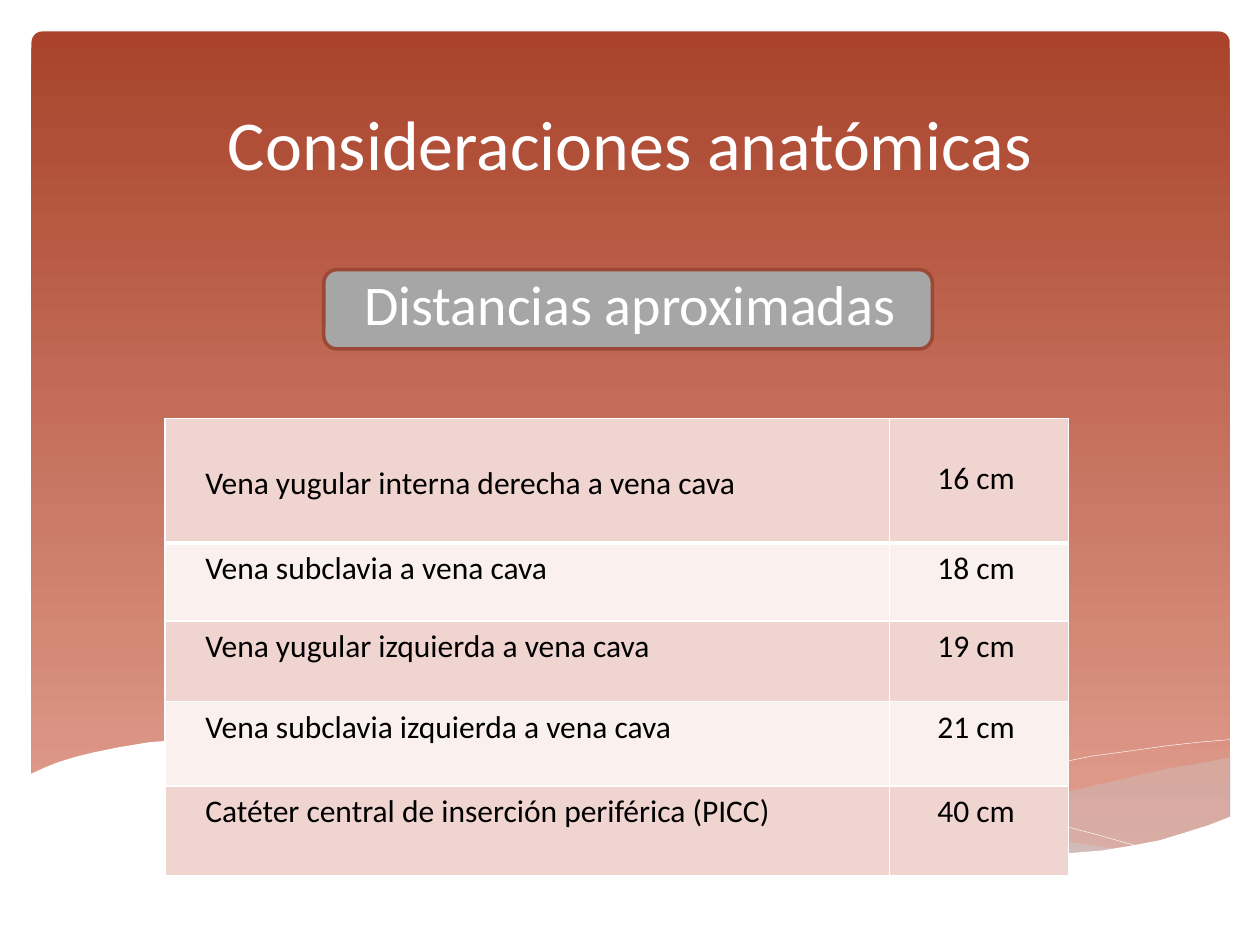
from lxml import etree
from pptx import Presentation
from pptx.dml.color import RGBColor
from pptx.enum.shapes import MSO_SHAPE
from pptx.enum.text import MSO_ANCHOR, PP_ALIGN
from pptx.oxml.ns import qn
from pptx.util import Inches, Pt

ROUNDED = MSO_SHAPE.ROUNDED_RECTANGLE
MIDDLE, TOP = MSO_ANCHOR.MIDDLE, MSO_ANCHOR.TOP
CENTER, LEFT = PP_ALIGN.CENTER, PP_ALIGN.LEFT

COLORS = {
    "white": "FFFFFF", "black": "000000",
    "panel_top": "A9432B", "panel_bottom": "E3A192",
    "mist": "C5D1D7", "pill": "A6A6A6", "pill_line": "9B4936",
    "band_dark": "EFD4D0", "band_light": "FAF1EF",
}
FONT = "Calibri"

TITLE = "Consideraciones anatómicas"
SUBTITLE = "Distancias aproximadas"
DISTANCES = [
    ("Vena yugular interna derecha a vena cava", "16 cm"),
    ("Vena subclavia a vena cava", "18 cm"),
    ("Vena yugular izquierda a vena cava", "19 cm"),
    ("Vena subclavia izquierda a vena cava", "21 cm"),
    ("Catéter central de inserción periférica (PICC)", "40 cm"),
]
COL_WIDTHS = (5.75, 1.42)
ROW_HEIGHTS = (0.99, 0.62, 0.64, 0.67, 0.71)
LEFT_MARGINS = (0.32, 0.38)
FIRST_ROW_TOPS = (0.37, 0.33)

# Waves at the foot of the panel, back to front: points in inches, then format
WAVES = [
    ([(9.77, 6.01), (9.5, 6.06), (9.22, 6.11), (8.92, 6.18), (8.62, 6.25),
      (8.06, 6.38), (7.54, 6.5), (7.07, 6.59), (6.62, 6.67), (6.92, 6.71),
      (7.19, 6.74), (7.45, 6.77), (7.7, 6.79), (8.04, 6.8), (8.36, 6.79),
      (8.64, 6.77), (8.9, 6.74), (9.14, 6.69), (9.37, 6.63), (9.51, 6.59),
      (9.77, 6.49)], {"fill": "mist", "alpha": 29}),
    ([(8.94, 6.75), (8.67, 6.71), (8.08, 6.62), (7.42, 6.49), (6.69, 6.33),
      (6.3, 6.24), (5.84, 6.13), (5.42, 6.05), (5.02, 5.98), (4.65, 5.93),
      (4.2, 5.89), (3.8, 5.88), (3.45, 5.88), (3.14, 5.9), (2.87, 5.93),
      (3.23, 5.98), (3.63, 6.05), (4.05, 6.13), (4.5, 6.24), (5.3, 6.42),
      (6.02, 6.57), (6.51, 6.66), (6.96, 6.72), (7.37, 6.77), (7.74, 6.79),
      (8.08, 6.8), (8.39, 6.8), (8.68, 6.78)], {"fill": "mist", "alpha": 40}),
    ([(3.1, 5.97), (3.29, 5.94), (3.53, 5.91), (3.88, 5.89), (4.33, 5.89),
      (4.69, 5.9), (5.11, 5.94), (5.57, 5.98), (6.09, 6.06), (6.66, 6.15),
      (7.28, 6.28), (7.96, 6.43), (8.69, 6.62), (9.08, 6.73)],
     {"line": "white"}),
    ([(6.14, 6.59), (6.53, 6.48), (6.96, 6.37), (7.49, 6.25), (8.07, 6.12),
      (8.67, 6), (8.97, 5.96), (9.25, 5.92), (9.52, 5.89), (9.76, 5.87)],
     {"line": "white"}),
    ([(9.77, 6.48), (9.59, 6.55), (9.4, 6.61), (9.2, 6.67), (8.99, 6.71),
      (8.75, 6.75), (8.5, 6.77), (8.23, 6.79), (7.93, 6.78), (7.61, 6.77),
      (7.26, 6.74), (6.88, 6.7), (6.47, 6.64), (6.03, 6.56), (5.55, 6.47),
      (5.03, 6.35), (4.47, 6.22), (3.91, 6.09), (3.39, 5.99), (2.92, 5.92),
      (2.5, 5.88), (2.11, 5.86), (1.77, 5.86), (1.46, 5.87), (1.19, 5.89),
      (0.95, 5.93), (0.75, 5.97), (0.59, 6.01), (0.46, 6.05), (0.36, 6.09),
      (0.23, 6.15), (0.23, 7.31), (9.77, 7.31)], {"fill": "white"}),
]


def rgb(name):
    return RGBColor.from_string(COLORS[name])


def write(p, text, size=18, color="black", align=LEFT, before=0):
    p.alignment = align
    if before:
        p.space_before = Pt(before)
    r = p.add_run()
    r.text = text
    r.font.name = FONT
    r.font.size = Pt(size)
    r.font.color.rgb = rgb(color)


def add_wave(shapes, points, fill=None, alpha=None, line=None):
    pts = [(Inches(x), Inches(y)) for x, y in points]
    builder = shapes.build_freeform(*pts[0])
    builder.add_line_segments(pts[1:], close=fill is not None)
    sp = builder.convert_to_shape()
    sp.shadow.inherit = False
    if fill:
        sp.fill.solid()
        sp.fill.fore_color.rgb = rgb(fill)
    else:
        sp.fill.background()
    if alpha:
        clr = sp._element.spPr.find(qn("a:solidFill"))[0]
        etree.SubElement(clr, qn("a:alpha"), val=str(alpha * 1000))
    if line:
        sp.line.color.rgb = rgb(line)
        sp.line.width = Pt(0.25)
    else:
        sp.line.fill.background()


def add_borders(cell, widths):
    """Draw white borders; widths maps the side letters L, R, T, B to points."""
    tc_pr = cell._tc.get_or_add_tcPr()
    for side, width in widths.items():
        ln = etree.SubElement(tc_pr, qn(f"a:ln{side}"), w=str(Pt(width)))
        solid = etree.SubElement(ln, qn("a:solidFill"))
        etree.SubElement(solid, qn("a:srgbClr"), val=COLORS["white"])


def add_panel(shapes):
    sp = shapes.add_shape(ROUNDED, Inches(0.25), Inches(0.25), Inches(9.51), Inches(6.6))
    sp.adjustments[0] = 0.013
    sp.shadow.inherit = False
    sp.line.fill.background()
    sp.fill.gradient()
    sp.fill.gradient_angle = 270
    for stop, name, pos in zip(sp.fill.gradient_stops, ("panel_top", "panel_bottom"), (0, 1)):
        stop.color.rgb = rgb(name)
        stop.position = pos


def add_heading(shapes):
    pill = shapes.add_shape(ROUNDED, Inches(2.57), Inches(2.14), Inches(4.83), Inches(0.63))
    pill.shadow.inherit = False
    pill.fill.solid()
    pill.fill.fore_color.rgb = rgb("pill")
    pill.line.color.rgb = rgb("pill_line")
    pill.line.width = Pt(2)

    tf = shapes.add_textbox(Inches(0.5), Inches(1.05), Inches(9), Inches(1.37)).text_frame
    tf.word_wrap = True
    tf.vertical_anchor = MIDDLE
    write(tf.paragraphs[0], TITLE, size=40, color="white", align=CENTER)
    write(tf.add_paragraph(), SUBTITLE, size=32, color="white", align=CENTER, before=49)


def add_distance_table(shapes):
    table = shapes.add_table(
        len(DISTANCES), len(COL_WIDTHS), Inches(1.31), Inches(3.32),
        Inches(sum(COL_WIDTHS)), Inches(sum(ROW_HEIGHTS))).table
    table.first_row = table.horz_banding = False
    for col, width in zip(table.columns, COL_WIDTHS):
        col.width = Inches(width)
    for i, (row, height) in enumerate(zip(table.rows, ROW_HEIGHTS)):
        row.height = Inches(height)
        for j, cell in enumerate(row.cells):
            add_borders(cell, {"L": 1, "R": 1, "T": 3 if i == 1 else 1, "B": 3 if i == 0 else 1})
            cell.fill.solid()
            cell.fill.fore_color.rgb = rgb("band_light" if i % 2 else "band_dark")
            cell.vertical_anchor = TOP
            cell.margin_left = Inches(LEFT_MARGINS[j])
            cell.margin_top = Inches(0.05 if i else FIRST_ROW_TOPS[j])
            write(cell.text_frame.paragraphs[0], DISTANCES[i][j])


def main():
    prs = Presentation()
    prs.slide_width, prs.slide_height = Inches(10), Inches(7.5)
    s = prs.slides.add_slide(prs.slide_layouts[6])
    add_panel(s.shapes)
    for points, style in WAVES:
        add_wave(s.shapes, points, **style)
    add_heading(s.shapes)
    add_distance_table(s.shapes)
    prs.save("out.pptx")


if __name__ == "__main__":
    main()
